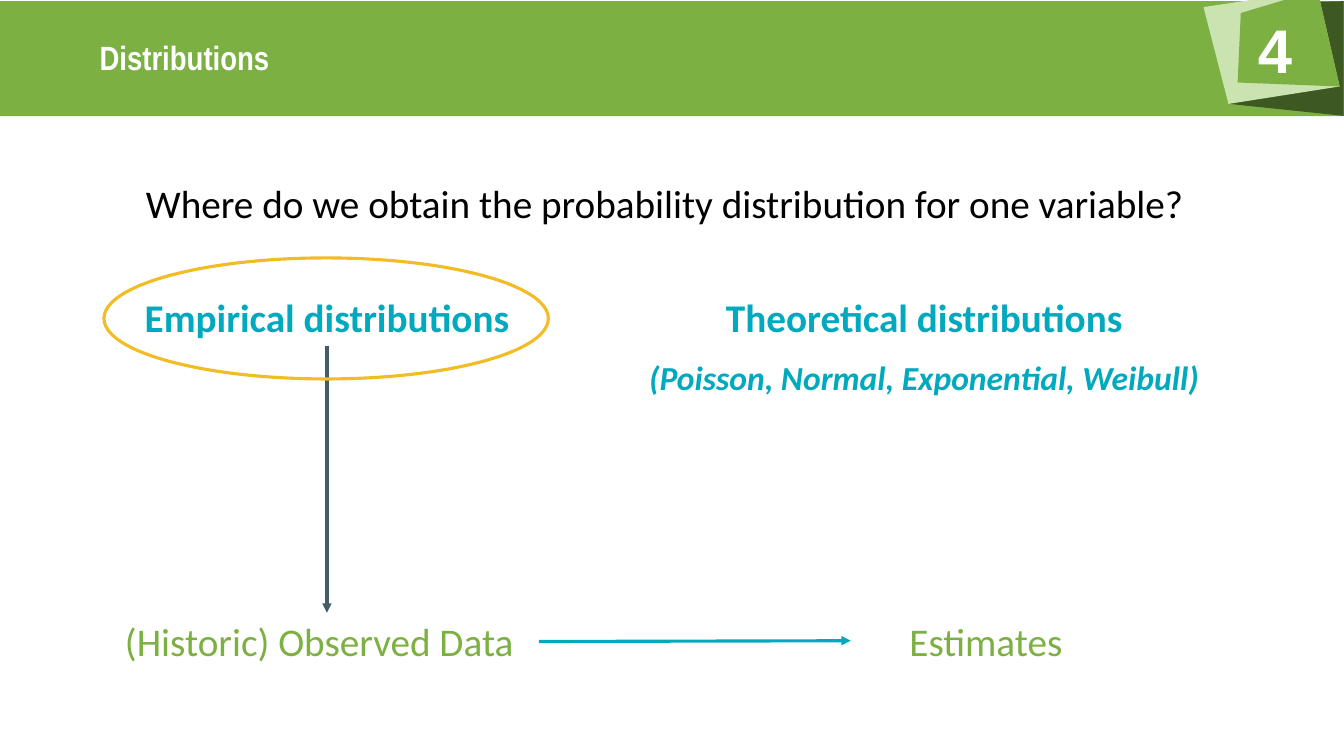
from dataclasses import dataclass

from lxml.etree import SubElement
from pptx import Presentation
from pptx.dml.color import RGBColor
from pptx.enum.shapes import MSO_CONNECTOR, MSO_SHAPE
from pptx.enum.text import MSO_ANCHOR, MSO_AUTO_SIZE, PP_ALIGN
from pptx.oxml.ns import qn
from pptx.util import Cm, Pt


@dataclass(frozen=True)
class Theme:
    """Colours, fonts and type sizes of the slide."""
    green: str = "7CB042"
    dark_green: str = "3E5821"
    light_green: str = "CBE2B1"
    teal: str = "00A9BE"
    slate: str = "455B66"
    amber: str = "F2BC24"
    white: str = "FFFFFF"
    black: str = "000000"
    body_font: str = "Calibri"
    title_font: str = "Arial Narrow"
    number_font: str = "Arial"
    number: int = 44
    body: int = 28
    small: int = 24
    line: float = 2.25


class SlideBuilder:
    """Draws elements on one slide in a shared style; lengths are in cm."""

    def __init__(self, s, theme):
        """Keep the slide and its theme."""
        self.s, self.t = s, theme

    def paint(self, sp, fill=None, line=None):
        """Set the fill and outline of a shape."""
        sp.shadow.inherit = False
        if fill:
            sp.fill.solid()
            sp.fill.fore_color.rgb = RGBColor.from_string(fill)
        else:
            sp.fill.background()
        if line:
            sp.line.color.rgb = RGBColor.from_string(line)
            sp.line.width = Pt(self.t.line)
        else:
            sp.line.fill.background()
        return sp

    def shape(self, kind, box, fill=None, line=None):
        """Add a preset shape."""
        sp = self.s.shapes.add_shape(kind, *map(Cm, box))
        return self.paint(sp, fill, line)

    def polygon(self, points, fill):
        """Add a closed polygon."""
        start, *rest = [(Cm(x), Cm(y)) for x, y in points]
        fb = self.s.shapes.build_freeform(*start)
        fb.add_line_segments(rest, close=True)
        return self.paint(fb.convert_to_shape(), fill)

    def style(self, p, size, color, font=None, bold=False, italic=False, align=PP_ALIGN.LEFT):
        """Format a paragraph and its runs."""
        p.alignment = align
        for r in p.runs:
            r.font.name = font or self.t.body_font
            r.font.size = Pt(size)
            r.font.bold, r.font.italic = bold, italic
            r.font.color.rgb = RGBColor.from_string(color)

    def text(self, box, text, size, color, grow=True, **style):
        """Add a wrapping text box with one paragraph."""
        sp = self.s.shapes.add_textbox(*map(Cm, box))
        tf = sp.text_frame
        tf.word_wrap = True
        tf.auto_size = MSO_AUTO_SIZE.SHAPE_TO_FIT_TEXT if grow else MSO_AUTO_SIZE.NONE
        tf.text = text
        self.style(tf.paragraphs[0], size, color, **style)
        return sp

    def arrow(self, start, start_site, end, end_site, color):
        """Join two boxes with a straight arrow."""
        c = self.s.shapes.add_connector(MSO_CONNECTOR.STRAIGHT, 0, 0, 0, 0)
        c.begin_connect(start, start_site)
        c.end_connect(end, end_site)
        c.line.color.rgb = RGBColor.from_string(color)
        c.line.width = Pt(self.t.line)
        SubElement(c.line._get_or_add_ln(), qn("a:tailEnd"), type="triangle")
        SubElement(c._element.spPr, qn("a:effectLst"))


def add_header(b, t):
    """Draw the title band and the numbered badge."""
    b.shape(MSO_SHAPE.RECTANGLE, (0, 0.03, 33.87, 2.9), t.green)
    b.polygon([(33.86, 0.03), (33.86, 2.92), (30.99, 2.62), (31.55, 0.69), (31.88, 0.08)],
              t.dark_green)
    top, corner = (33.2, -0.25), (33.76, 2.18)
    b.polygon([top, corner, (30.96, 2.62), (30.33, 0.18)], t.light_green)
    badge = b.polygon([top, corner, (31.19, 2.08), (31.27, 0.33)], t.green)
    tf = badge.text_frame
    tf.margin_left, tf.margin_top, tf.margin_right, tf.margin_bottom = map(
        Cm, (0.51, 1.02, 0.76, 0.51))
    tf.vertical_anchor = MSO_ANCHOR.MIDDLE
    tf.text = "4"
    b.style(tf.paragraphs[0], t.number, t.white, t.number_font, bold=True)
    b.text((2.26, 0.81, 10.77, 1.27), "Distributions", t.small, t.white,
           font=t.title_font, bold=True)


def add_content(b, t):
    """Draw the question, the two kinds of distribution and the flow."""
    question = b.text((2.41, 4.52, 30.78, 14),
                      "Where do we obtain the probability distribution for one variable?",
                      t.body, t.black, grow=False)
    question.text_frame.margin_left = Cm(1.27)
    question.text_frame.paragraphs[0].line_spacing = 0.9

    heading = dict(size=t.body, color=t.teal, bold=True, align=PP_ALIGN.CENTER)
    theoretical = b.text((15.85, 7.26, 14.88, 2.9), "Theoretical distributions", **heading)
    p = theoretical.text_frame.add_paragraph()
    p.text = "(Poisson, Normal, Exponential, Weibull)"
    p.space_before = Pt(12)
    b.style(p, t.small, t.teal, bold=True, italic=True, align=PP_ALIGN.CENTER)

    observed = b.text((2.9, 15.44, 10.68, 1.45), "(Historic) Observed Data", t.body, t.green)
    empirical = b.text((2.46, 7.26, 11.56, 1.45), "Empirical distributions", **heading)
    estimates = b.text((21.44, 15.42, 6.81, 1.45), "Estimates", t.body, t.green,
                       align=PP_ALIGN.CENTER)
    b.arrow(observed, 3, estimates, 1, t.teal)
    b.arrow(empirical, 2, observed, 0, t.slate)
    b.shape(MSO_SHAPE.OVAL, (2.62, 6.5, 11.2, 3.05), line=t.amber)


def main():
    """Build and save the slide."""
    prs = Presentation()
    prs.slide_width, prs.slide_height = Cm(33.87), Cm(19.05)
    theme = Theme()
    b = SlideBuilder(prs.slides.add_slide(prs.slide_layouts[6]), theme)
    add_header(b, theme)
    add_content(b, theme)
    prs.save("out.pptx")


if __name__ == "__main__":
    main()
